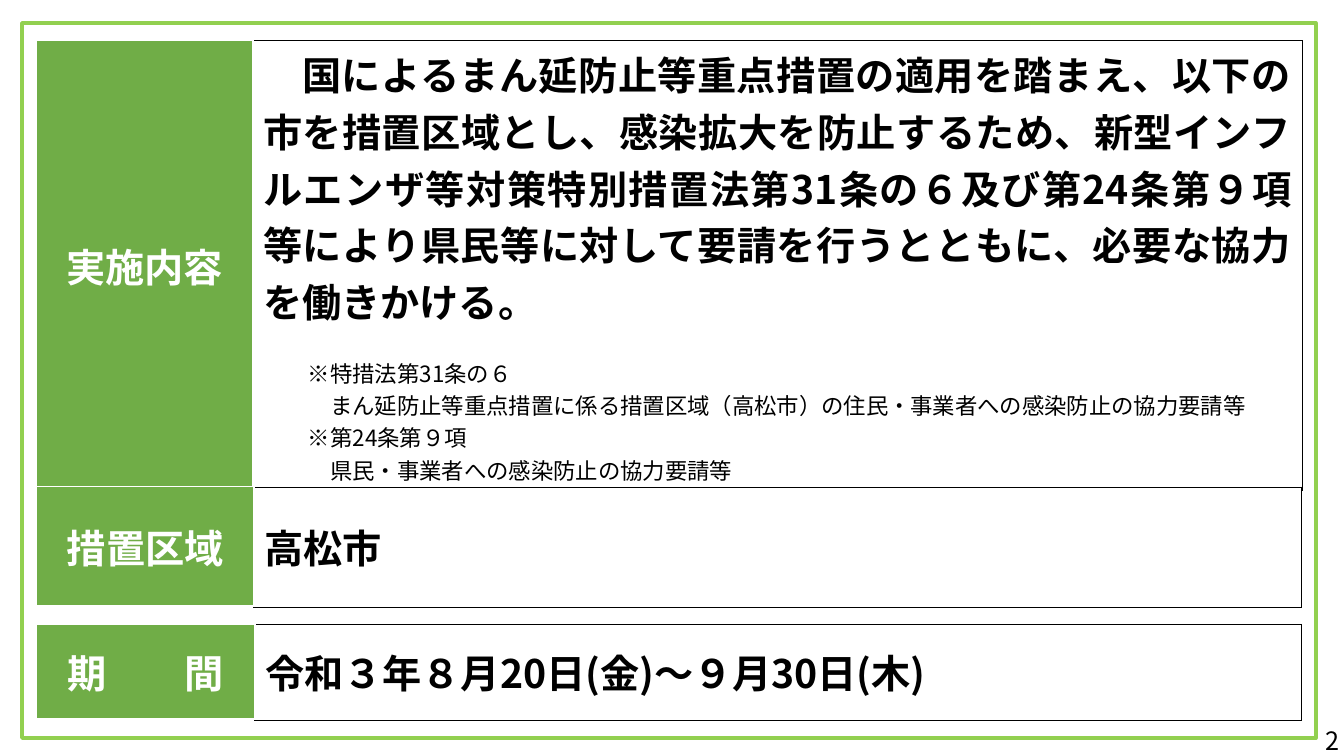
"""Build the slide on the measures, their area and their period."""
import pptx
import pptx.dml.color
import pptx.enum.shapes
import pptx.enum.text
import pptx.oxml
import pptx.oxml.ns
import pptx.util

Inches = pptx.util.Inches
Pt = pptx.util.Pt
ALIGN = pptx.enum.text.PP_ALIGN
MIDDLE = pptx.enum.text.MSO_ANCHOR.MIDDLE
FONT = "Noto Sans CJK JP"


def color(value):
    return pptx.dml.color.RGBColor.from_string(value)


def write_paragraph(paragraph, text, size, bold, font_color, alignment):
    paragraph.text = text
    paragraph.alignment = alignment
    for run in paragraph.runs:
        run.font.size = Pt(size)
        run.font.bold = bold
        run.font.color.rgb = color(font_color)
        run.font.name = FONT
        properties = run.font._element
        properties.set("lang", "ja-JP")
        east_asian = pptx.oxml.parse_xml(f'<a:ea {pptx.oxml.ns.nsdecls("a")} typeface="{FONT}"/>')
        properties.find(pptx.oxml.ns.qn("a:latin")).addnext(east_asian)


presentation = pptx.Presentation()
presentation.slide_width = Inches(13.33)
presentation.slide_height = Inches(7.5)
slide = presentation.slides.add_slide(presentation.slide_layouts[6])

frame = slide.shapes.add_shape(
    pptx.enum.shapes.MSO_SHAPE.RECTANGLE, Inches(0.22), Inches(0.23), Inches(12.83), Inches(7.09)
)
frame.shadow.inherit = False
frame.fill.background()
frame.line.color.rgb = color("92D050")
frame.line.width = Pt(3)

measures = (
    "国によるまん延防止等重点措置の適用を踏まえ、以下の市を措置区域とし、"
    "感染拡大を防止するため、新型インフルエンザ等対策特別措置法第31条の６及び"
    "第24条第９項等により県民等に対して要請を行うとともに、必要な協力を働きかける。"
)
notes = [
    ("※特措法第31条の６", 2),
    ("まん延防止等重点措置に係る措置区域（高松市）の住民・事業者への感染防止の協力要請等", 3),
    ("※第24条第９項", 2),
    ("県民・事業者への感染防止の協力要請等", 3),
]
sections = [
    ("実施内容", measures, 0.4, 4.26, 2.15, ALIGN.JUSTIFY),
    ("措置区域", "高松市", 4.83, 1.19, 2.16, ALIGN.LEFT),
    ("期　　間", "令和３年８月20日(金)～９月30日(木)", 6.19, 0.95, 2.17, ALIGN.LEFT),
]
label_borders = [("lnL", "FFFFFF", 1), ("lnT", "FFFFFF", 1), ("lnB", "FFFFFF", 3)]
content_borders = [("lnR", "000000", 0.25), ("lnT", "000000", 0.25), ("lnB", "000000", 0.25)]

content_cells = []
for label, content, top, height, label_width, alignment in sections:
    table = slide.shapes.add_table(
        1, 2, Inches(0.36), Inches(top), Inches(12.55), Inches(height)
    ).table
    table.first_row = False
    table.horz_banding = False
    table.columns[0].width = Inches(label_width)
    table.columns[1].width = Inches(12.55 - label_width)
    columns = [
        (label, "FFFFFF", "70AD47", ALIGN.CENTER, label_borders),
        (content, "000000", "FFFFFF", alignment, content_borders),
    ]
    for column, (text, font_color, fill_color, text_alignment, borders) in enumerate(columns):
        cell = table.cell(0, column)
        cell.vertical_anchor = MIDDLE
        cell.fill.solid()
        cell.fill.fore_color.rgb = color(fill_color)
        write_paragraph(
            cell.text_frame.paragraphs[0], text, 28, True, font_color, text_alignment
        )
        cell_properties = cell._tc.get_or_add_tcPr()
        for position, (side, border_color, width) in enumerate(borders):
            border = pptx.oxml.parse_xml(
                f'<a:{side} {pptx.oxml.ns.nsdecls("a")} w="{Pt(width)}">'
                f'<a:solidFill><a:srgbClr val="{border_color}"/></a:solidFill></a:{side}>'
            )
            cell_properties.insert(position, border)
    content_cells.append(cell)

measures_frame = content_cells[0].text_frame
measures_frame.paragraphs[0]._p.get_or_add_pPr().set("indent", str(Pt(28)))
for number, (note, indent) in enumerate(notes):
    paragraph = measures_frame.add_paragraph()
    write_paragraph(paragraph, note, 16, False, "000000", ALIGN.JUSTIFY)
    paragraph._p.get_or_add_pPr().set("marL", str(Pt(16 * indent)))
    if number == 0:
        paragraph.space_before = Pt(20)

page_number = slide.shapes.add_textbox(Inches(10.38), Inches(7.15), Inches(3), Inches(0.4))
page_number.text_frame.word_wrap = True
page_number.text_frame.vertical_anchor = MIDDLE
write_paragraph(page_number.text_frame.paragraphs[0], "2", 18, False, "000000", ALIGN.RIGHT)

presentation.save("out.pptx")
